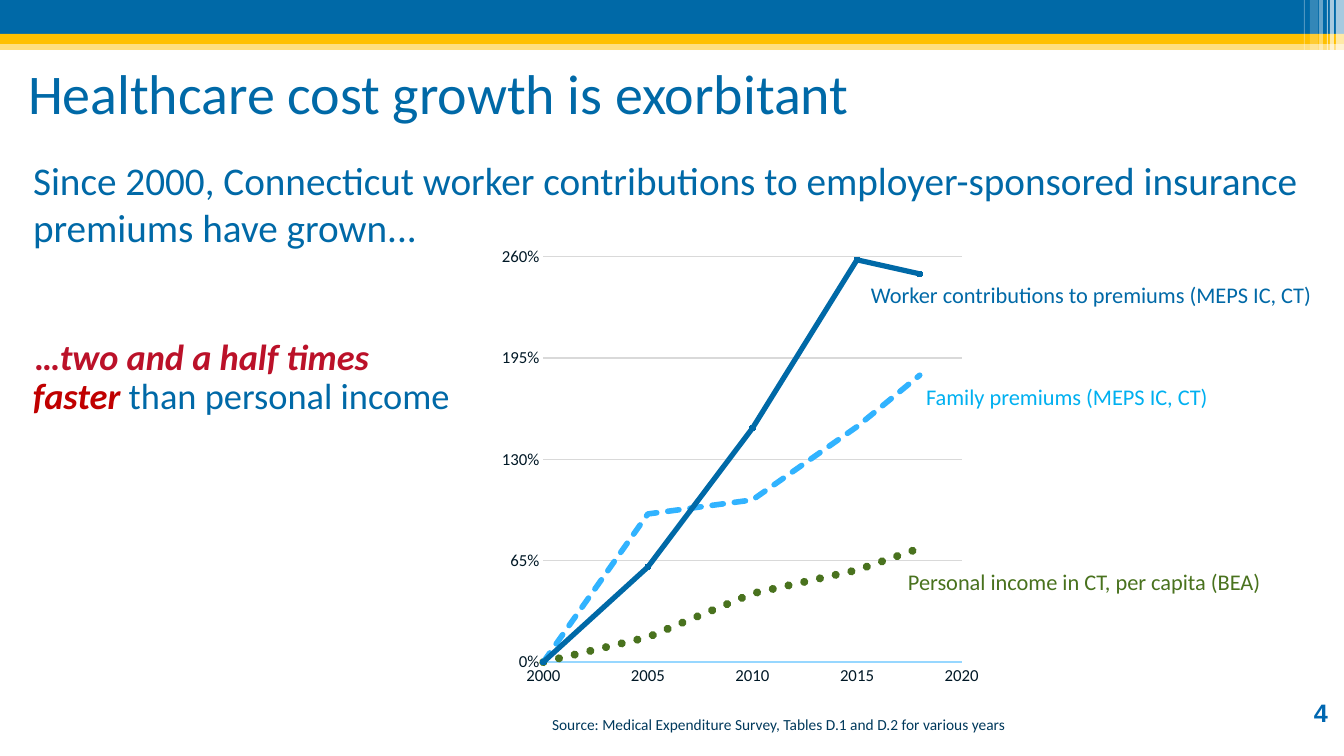
from lxml import etree
from pptx import Presentation
from pptx.chart.data import XyChartData
from pptx.dml.color import RGBColor
from pptx.enum.chart import XL_CHART_TYPE, XL_MARKER_STYLE, XL_TICK_MARK
from pptx.enum.dml import MSO_LINE
from pptx.enum.shapes import MSO_SHAPE
from pptx.enum.text import MSO_ANCHOR, PP_ALIGN
from pptx.oxml import parse_xml
from pptx.oxml.ns import nsdecls, qn
from pptx.util import Pt

RECTANGLE = MSO_SHAPE.RECTANGLE
SCATTER = XL_CHART_TYPE.XY_SCATTER_LINES
CIRCLE, NO_MARKER = XL_MARKER_STYLE.CIRCLE, XL_MARKER_STYLE.NONE
NO_TICK = XL_TICK_MARK.NONE
DASH, DOT = MSO_LINE.SQUARE_DOT, MSO_LINE.ROUND_DOT
TOP, MIDDLE, BOTTOM = MSO_ANCHOR.TOP, MSO_ANCHOR.MIDDLE, MSO_ANCHOR.BOTTOM
LEFT, RIGHT = PP_ALIGN.LEFT, PP_ALIGN.RIGHT

EMU_PER_PX = 914400 / 100.8
COLORS = {
    "blue": "0069A7", "amber": "FFC000", "white": "FFFFFF", "number": "0067B1",
    "navy": "00395C", "ink": "001826", "axis": "97D7FF", "grid": "D9D9D9",
    "sky": "31B3FF", "cyan": "00B0F0", "green": "49721E",
    "crimson": "BB1129", "red": "C00000",
}
BANDS = [
    (0, 40, 1344, 10, "amber", 50),
    (0, 0, 1344, 34, "blue", 100),
    (0, 34, 1344, 10, "amber", 100),
]
STRIPES = [
    (1336, 8, 69, 65), (1330, 4, 69, 65), (1327, 1, 69, 60),
    (1319, 4, 69, 40), (1310, 8, 64, 20), (1304, 1, 64, 30),
]
YEARS = [2000, 2005, 2010, 2015, 2018]
GROWTH = [
    ("Worker contributions", [0, 0.61, 1.5, 2.58, 2.49], "blue", 3.75, None),
    ("Family premiums", [0, 0.95, 1.04, 1.51, 1.84], "sky", 4, DASH),
    ("Personal income", [0, 0.16, 0.44, 0.59, 0.73], "green", 5.75, DOT),
]
SERIES_LABELS = [
    ("Worker contributions to premiums (MEPS IC, CT)", 861, 276, 473, "blue"),
    ("Family premiums (MEPS IC, CT)", 916, 378, 361, "cyan"),
    ("Personal income in CT, per capita (BEA)", 898, 563, 446, "green"),
]
PLOT_AREA = {"x": 0.127, "y": 0.026, "w": 0.814, "h": 0.897}


def px(length):
    return round(length * EMU_PER_PX)


def rgb(name):
    return RGBColor.from_string(COLORS[name])


def format_font(font, size, color, name="Calibri", bold=False, italic=False):
    font.name, font.size = name, Pt(size)
    font.bold, font.italic = bold, italic
    font.color.rgb = rgb(color)


def add_span(para, text, **style):
    span = para.add_run()
    span.text = text
    format_font(span.font, **style)


def format_frame(frame, anchor=TOP, wrap=True, inset=5):
    frame.word_wrap = wrap
    frame.vertical_anchor = anchor
    frame.margin_left = frame.margin_right = px(inset)
    frame.margin_top = frame.margin_bottom = px(5)


def add_text(page, place, spans, align=LEFT, **layout):
    box = page.shapes.add_textbox(*map(px, place))
    format_frame(box.text_frame, **layout)
    para = box.text_frame.paragraphs[0]
    para.alignment = align
    for text, style in spans:
        add_span(para, text, **style)


def add_title(page, text):
    title = page.shapes.title
    title.left, title.top, title.width, title.height = map(px, (23, 46, 1210, 92))
    format_frame(title.text_frame, anchor=MIDDLE)
    para = title.text_frame.paragraphs[0]
    para.alignment = LEFT
    add_span(para, text, size=40, color="blue")


def add_band(page, left, top, width, height, color, opacity):
    band = page.shapes.add_shape(RECTANGLE, *map(px, (left, top, width, height)))
    band.shadow.inherit = False
    band.line.fill.background()
    band.fill.solid()
    band.fill.fore_color.rgb = rgb(color)
    if opacity < 100:
        tint = band.fill._xPr.find(".//" + qn("a:srgbClr"))
        etree.SubElement(tint, qn("a:alpha")).set("val", str(opacity * 1000))


def format_axis(axis, low, high, step, number_format):
    axis.minimum_scale, axis.maximum_scale, axis.major_unit = low, high, step
    axis.major_tick_mark = axis.minor_tick_mark = NO_TICK
    axis.has_major_gridlines = False
    format_font(axis.tick_labels.font, 12, "ink")
    axis.tick_labels.number_format = number_format
    axis.tick_labels.number_format_is_linked = False


def format_line(line, color, width):
    line.color.rgb = rgb(color)
    line.width = Pt(width)


def format_series(series, color, width, dash):
    series.smooth = False
    line = series.format.line
    format_line(line, color, width)
    series.format.line._get_or_add_ln().set("cap", "rnd")
    if dash:
        line.dash_style = dash
        series.marker.style = NO_MARKER
        return
    series.marker.style = CIRCLE
    series.marker.size = 4
    series.marker.format.fill.solid()
    series.marker.format.fill.fore_color.rgb = rgb("navy")
    series.marker.format.line.color.rgb = rgb(color)


def set_plot_area(chart):
    sizes = "".join(f'<c:{key} val="{value}"/>' for key, value in PLOT_AREA.items())
    layout = parse_xml(
        f'<c:layout {nsdecls("c")}><c:manualLayout><c:layoutTarget val="inner"/>'
        f'<c:xMode val="edge"/><c:yMode val="edge"/>{sizes}</c:manualLayout></c:layout>'
    )
    area = chart._chartSpace.chart.plotArea
    for old in area.findall(qn("c:layout")):
        area.remove(old)
    area.insert(0, layout)


def add_growth_chart(page):
    data = XyChartData()
    for name, values, *_ in GROWTH:
        series = data.add_series(name)
        for year, value in zip(YEARS, values):
            series.add_data_point(year, value)
    chart = page.shapes.add_chart(SCATTER, *map(px, (478, 245, 514, 452)), data).chart
    chart.has_title = chart.has_legend = False
    format_font(chart.font, 10, "navy", name="Arial")
    format_axis(chart.category_axis, 2000, 2020, 5, "0")
    format_line(chart.category_axis.format.line, "axis", 1)
    format_axis(chart.value_axis, 0, 2.6, 0.65, "0%")
    chart.value_axis.format.line.fill.background()
    chart.value_axis.has_major_gridlines = True
    format_line(chart.value_axis.major_gridlines.format.line, "grid", 1)
    plot = chart.plots[0]
    plot.vary_by_categories = False
    for series, (_, _, color, width, dash) in zip(plot.series, GROWTH):
        format_series(series, color, width, dash)
    set_plot_area(chart)


def main():
    deck = Presentation()
    deck.slide_width, deck.slide_height = px(1344), px(756)
    page = deck.slides.add_slide(deck.slide_layouts[5])
    for band in BANDS:
        add_band(page, *band)
    for left, width, height, opacity in STRIPES:
        add_band(page, left, 0, width, height, "white", opacity)
    add_title(page, "Healthcare cost growth is exorbitant")
    add_text(page, (1309, 697, 24, 36),
             [("4", dict(size=18, color="number", name="Arial", bold=True))],
             align=RIGHT, anchor=BOTTOM, wrap=False)
    add_growth_chart(page)
    emphasis = dict(size=25.9, color="crimson", bold=True)
    add_text(page, (29, 329, 540, 54),
             [("…", emphasis), ("two and a half times", dict(emphasis, italic=True))],
             anchor=MIDDLE)
    add_text(page, (547, 710, 530, 29),
             [("Source: Medical Expenditure Survey, Tables D.1 and D.2 for various years",
               dict(size=11, color="navy"))])
    add_text(page, (28, 151, 1304, 105),
             [("Since 2000, Connecticut worker contributions to employer-sponsored "
               "insurance premiums have grown...", dict(size=28, color="blue"))])
    add_text(page, (28, 368, 432, 54),
             [("faster", dict(size=26, color="red", bold=True, italic=True)),
              (" than personal income", dict(size=26, color="blue"))], wrap=False)
    for text, left, top, width, color in SERIES_LABELS:
        add_text(page, (left, top, width, 37), [(text, dict(size=16, color=color))],
                 inset=10)
    deck.save("out.pptx")


if __name__ == "__main__":
    main()
